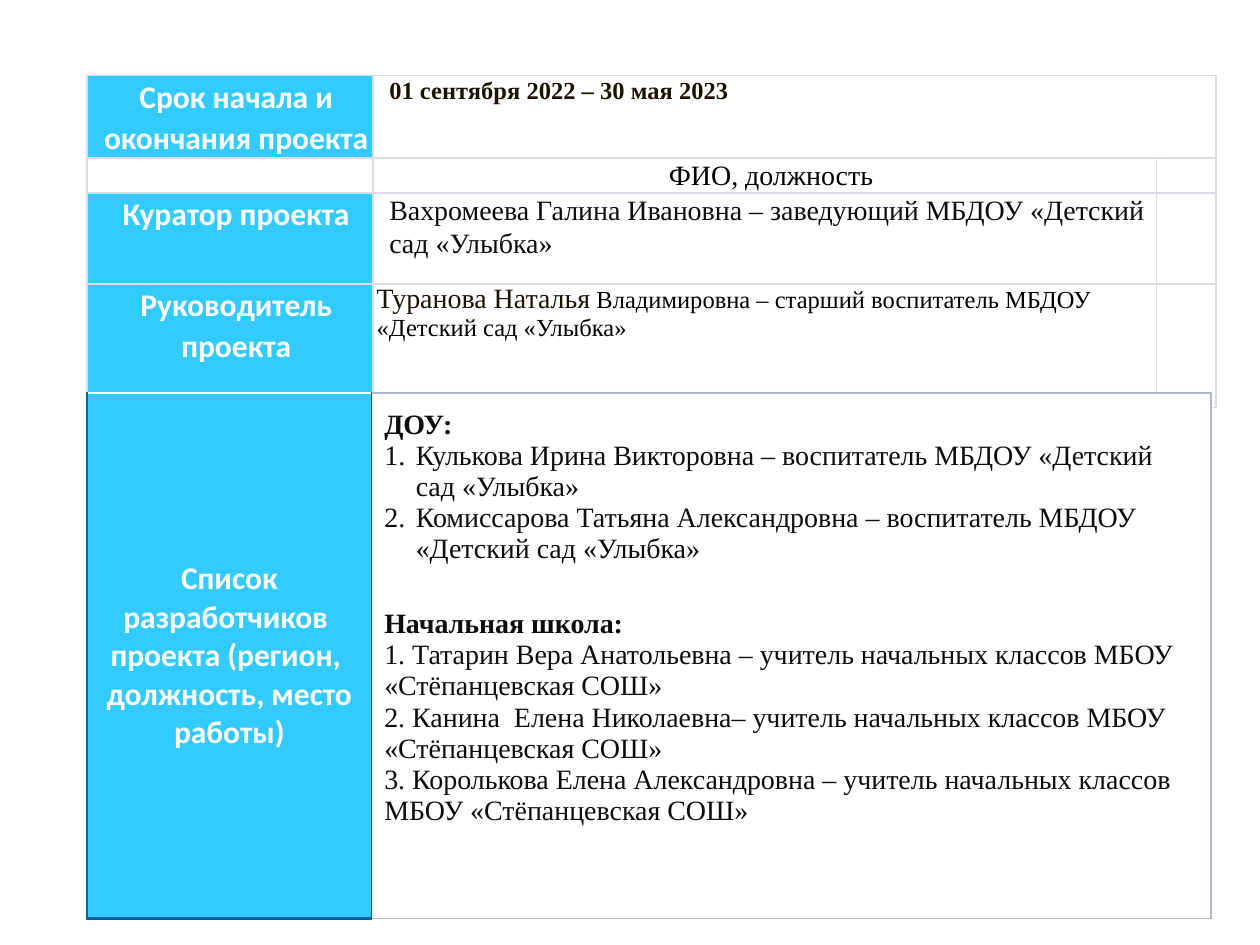
from dataclasses import dataclass

import pptx
import pptx.dml.color
import pptx.enum.text
import pptx.oxml
import pptx.oxml.ns
import pptx.util
from pptx.util import Inches

Align = pptx.enum.text.PP_ALIGN
Anchor = pptx.enum.text.MSO_ANCHOR


@dataclass(frozen=True)
class Theme:
    label_fill: str = "33CAFF"
    white: str = "FFFFFF"
    black: str = "000000"
    ink: str = "0D0D0D"
    brown: str = "1A1300"
    grid: str = "D8DCE5"
    frame: str = "0062A7"
    pale_frame: str = "B0B9CB"
    label_size: int = 18
    body_size: int = 16
    small_size: int = 14
    label_font: str = "Calibri"
    body_font: str = "Times New Roman"


THEME = Theme()


@dataclass(frozen=True)
class Run:
    text: str
    size: int = THEME.body_size
    color: str = THEME.ink
    bold: bool = False
    font: str = THEME.body_font


@dataclass(frozen=True)
class Line:
    runs: tuple[Run, ...]
    align: Align = Align.LEFT
    spacing: float = 1.0
    before: int = 0
    numbered: bool = False


@dataclass(frozen=True)
class Margins:
    left: float
    top: float
    right: float
    bottom: float


@dataclass(frozen=True)
class Border:
    color: str
    width: float = 1


INDENTED = Margins(0.13, 0, 0.03, 0)
FLUSH = Margins(0.03, 0, 0.03, 0)
ROOMY = Margins(0.1, 0.05, 0.1, 0.05)
LIST_MARGINS = Margins(0.1, 0.13, 0.1, 0.05)
GRID = (Border(THEME.grid),) * 4


def label(text: str, spacing: float = 1.07) -> Line:
    run = Run(text, THEME.label_size, THEME.white, True, THEME.label_font)
    return Line((run,), Align.CENTER, spacing)


def add_element(parent, tag: str, **attributes: str):
    element = parent.makeelement(pptx.oxml.ns.qn(tag), attributes)
    parent.append(element)
    return element


def set_borders(cell, borders: tuple[Border, ...]) -> None:
    """Borders come in the order left, right, top, bottom."""
    properties = cell._tc.get_or_add_tcPr()
    for index, (side, border) in enumerate(zip("LRTB", borders)):
        width = str(pptx.util.Pt(border.width))
        line = add_element(properties, f"a:ln{side}", w=width)
        fill = add_element(line, "a:solidFill")
        add_element(fill, "a:srgbClr", val=border.color)
        properties.insert(index, line)


def write_line(paragraph, line: Line) -> None:
    paragraph.alignment = line.align
    paragraph.line_spacing = line.spacing
    paragraph.space_before = pptx.util.Pt(line.before)
    for item in line.runs:
        run = paragraph.add_run()
        run.text = item.text
        run.font.size = pptx.util.Pt(item.size)
        run.font.name = item.font
        run.font.bold = item.bold
        run.font.color.rgb = pptx.dml.color.RGBColor.from_string(item.color)
    if line.numbered:
        properties = paragraph._p.get_or_add_pPr()
        properties.set("marL", str(Inches(0.25)))
        properties.set("indent", str(-Inches(0.25)))
        add_element(properties, "a:buFont", typeface="+mj-lt")
        add_element(properties, "a:buAutoNum", type="arabicPeriod")


def fill_cell(cell, lines: tuple[Line, ...], fill: str, margins: Margins,
              borders: tuple[Border, ...], anchor: Anchor = Anchor.TOP) -> None:
    cell.margin_left, cell.margin_top = Inches(margins.left), Inches(margins.top)
    cell.margin_right, cell.margin_bottom = Inches(margins.right), Inches(margins.bottom)
    cell.vertical_anchor = anchor
    cell.fill.solid()
    cell.fill.fore_color.rgb = pptx.dml.color.RGBColor.from_string(fill)
    set_borders(cell, borders)
    paragraph = cell.text_frame.paragraphs[0]
    if not lines:
        add_element(paragraph._p, "a:endParaRPr", sz="1200")
    for index, line in enumerate(lines):
        write_line(cell.text_frame.add_paragraph() if index else paragraph, line)


def add_plain_table(slide, left: float, top: float, columns: tuple[float, ...],
                    rows: tuple[float, ...]):
    table = slide.shapes.add_table(
        len(rows), len(columns), Inches(left), Inches(top),
        Inches(sum(columns)), Inches(sum(rows))).table
    table.first_row = table.horz_banding = False
    for column, width in zip(table.columns, columns):
        column.width = Inches(width)
    for row, height in zip(table.rows, rows):
        row.height = Inches(height)
    return table


def add_project_table(slide) -> None:
    small = THEME.small_size
    rows = (
        ("Срок начала и окончания проекта", INDENTED, Line((
            Run("01 сентября 2022 – 30 мая 2023", small, THEME.brown, True),), spacing=1.07)),
        ("", INDENTED, Line((
            Run("ФИО, должность", color=THEME.black),), Align.CENTER, 1.07)),
        ("Куратор проекта", INDENTED, Line((
            Run("Вахромеева Галина Ивановна – заведующий МБДОУ «Детский сад «Улыбка»"),),
            spacing=1.07)),
        ("Руководитель проекта", FLUSH, Line((
            Run("Туранова Наталья", color=THEME.brown),
            Run(" Владимировна – старший воспитатель МБДОУ  «Детский сад «Улыбка»",
                small, THEME.black)))),
    )
    table = add_plain_table(slide, 0.69, 0.6, (2.27, 6.22, 0.47), (0.65, 0.28, 0.72, 0.98))
    for index, (title, margins, value) in enumerate(rows):
        title_lines = (label(title),) if title else ()
        title_fill = THEME.label_fill if title else THEME.white
        fill_cell(table.cell(index, 0), title_lines, title_fill, INDENTED, GRID)
        fill_cell(table.cell(index, 1), (value,), THEME.white, margins, GRID)
        fill_cell(table.cell(index, 2), (), THEME.white, FLUSH, GRID)
    table.cell(0, 1).merge(table.cell(0, 2))


def add_developers_table(slide) -> None:
    table = add_plain_table(slide, 0.69, 3.12, (2.26, 6.66), (4.17,))
    frame, thick = Border(THEME.frame), Border(THEME.frame, 1.5)
    pale = Border(THEME.pale_frame)
    titles = (label("Список разработчиков ", 1),
              label("проекта (регион,  должность, место работы)", 1))
    fill_cell(table.cell(0, 0), titles, THEME.label_fill, ROOMY,
              (thick, frame, Border(THEME.white, 1.5), thick), Anchor.MIDDLE)

    educators = ("Кулькова Ирина Викторовна", "Комиссарова Татьяна Александровна")
    teachers = ("Татарин Вера Анатольевна –", "Канина  Елена Николаевна–",
                "Королькова Елена Александровна –")
    lines = (
        Line((Run("ДОУ:", bold=True),)),
        *(Line((Run(f"{name} – воспитатель МБДОУ «Детский сад «Улыбка»"),), numbered=True)
          for name in educators),
        Line((Run("Начальная школа:", bold=True),), before=25),
        *(Line((Run(f"{number}. {name} учитель начальных классов МБОУ «Стёпанцевская СОШ»"),))
          for number, name in enumerate(teachers, 1)),
    )
    fill_cell(table.cell(0, 1), lines, THEME.white, LIST_MARGINS, (frame, pale, pale, pale))


def main() -> None:
    presentation = pptx.Presentation()
    presentation.slide_width, presentation.slide_height = Inches(10), Inches(7.5)
    slide = presentation.slides.add_slide(presentation.slide_layouts[6])
    add_project_table(slide)
    add_developers_table(slide)
    presentation.save("out.pptx")


if __name__ == "__main__":
    main()
